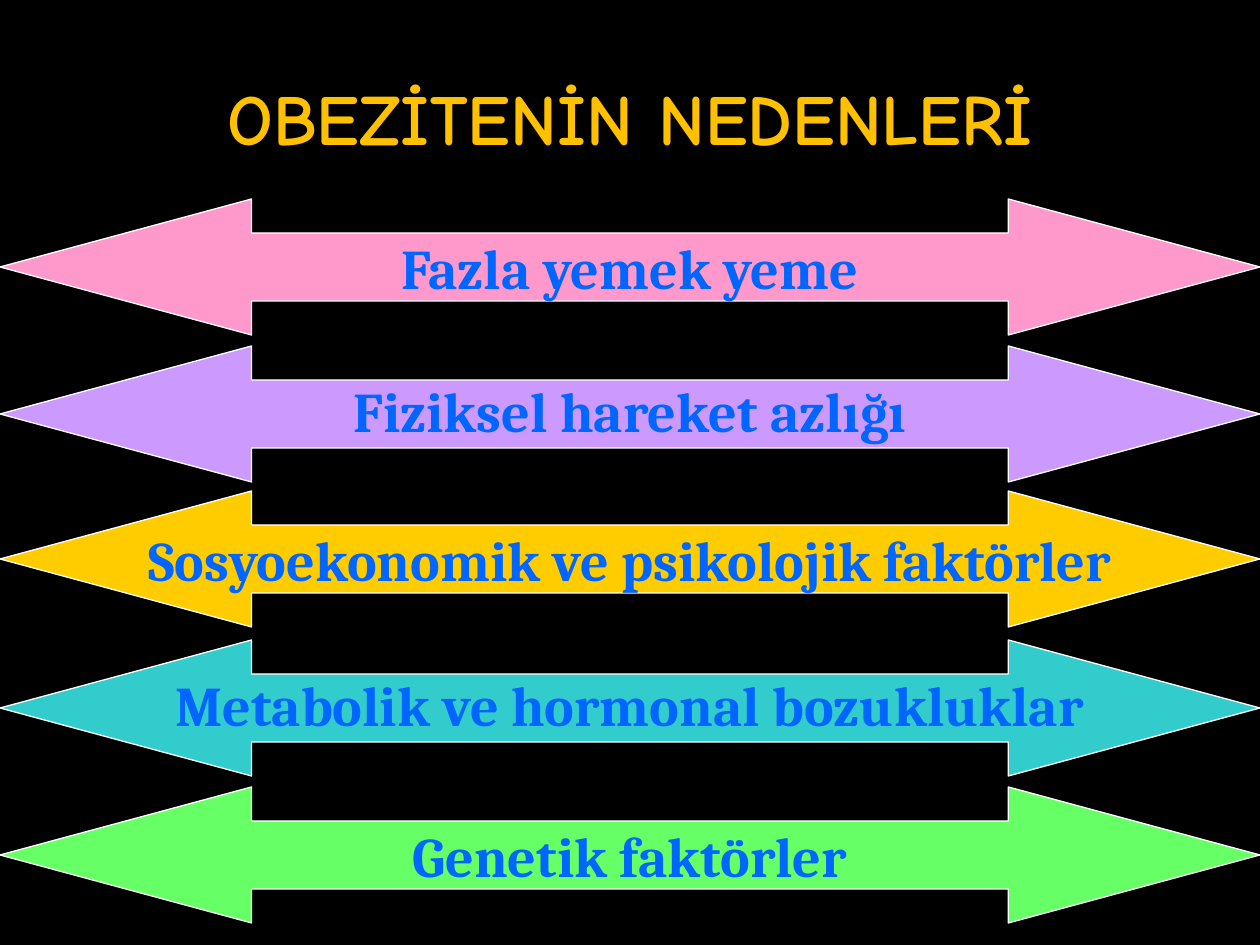
from pptx import Presentation
from pptx.dml.color import RGBColor
from pptx.enum.shapes import MSO_SHAPE
from pptx.enum.text import MSO_ANCHOR, PP_ALIGN
from pptx.util import Emu, Pt

EMU_PER_PX = 914400 / 126

BLACK = RGBColor(0x00, 0x00, 0x00)
WHITE = RGBColor(0xFF, 0xFF, 0xFF)
AMBER = RGBColor(0xFF, 0xC0, 0x00)
BLUE = RGBColor(0x00, 0x66, 0xFF)
PINK = RGBColor(0xFF, 0x99, 0xCC)
LILAC = RGBColor(0xCC, 0x99, 0xFF)
GOLD = RGBColor(0xFF, 0xCC, 0x00)
TEAL = RGBColor(0x33, 0xCC, 0xCC)
GREEN = RGBColor(0x66, 0xFF, 0x66)

TITLE_FONT = {"name": "Comic Neue", "size": Pt(41), "bold": True}
CAUSE_FONT = {"name": "Cambria", "size": Pt(32), "bold": True}

CAUSES = [
    (199, "Fazla yemek yeme", PINK, 1.0),
    (346, "Fiziksel hareket azlığı", LILAC, 0.9),
    (491, "Sosyoekonomik ve psikolojik faktörler", GOLD, 1.0),
    (640, "Metabolik ve hormonal bozukluklar", TEAL, 0.9),
    (787, "Genetik faktörler", GREEN, 1.0),
]


def px(*lengths):
    """Turn pixel lengths into a list of EMU lengths."""
    return [Emu(round(length * EMU_PER_PX)) for length in lengths]


def write_text(shape, text, font_format, color, wrap, line_spacing=1.0):
    """Put one centred, formatted paragraph into a shape."""
    frame = shape.text_frame
    frame.word_wrap = wrap
    frame.vertical_anchor = MSO_ANCHOR.MIDDLE
    paragraph = frame.paragraphs[0]
    paragraph.alignment = PP_ALIGN.CENTER
    paragraph.line_spacing = line_spacing
    run = paragraph.add_run()
    run.text = text
    for attribute, value in font_format.items():
        setattr(run.font, attribute, value)
    run.font.color.rgb = color


def add_title(slide, text):
    """Add the slide heading."""
    shape = slide.shapes.add_textbox(*px(63, 38, 1134, 157))
    write_text(shape, text, TITLE_FONT, AMBER, True)


def add_cause(slide, top, text, color, line_spacing):
    """Add a full-width double arrow naming one cause."""
    shape = slide.shapes.add_shape(
        MSO_SHAPE.LEFT_RIGHT_ARROW, *px(0, top, 1260, 136)
    )
    shape.adjustments[0] = 0.5
    shape.adjustments[1] = 1.85
    shape.shadow.inherit = False
    shape.fill.solid()
    shape.fill.fore_color.rgb = color
    shape.line.color.rgb = WHITE
    shape.line.width = Pt(0.75)
    write_text(shape, text, CAUSE_FONT, BLUE, False, line_spacing)


def main():
    """Build and save the slide."""
    presentation = Presentation()
    presentation.slide_width, presentation.slide_height = px(1260, 945)
    slide = presentation.slides.add_slide(presentation.slide_layouts[6])
    slide.background.fill.solid()
    slide.background.fill.fore_color.rgb = BLACK
    add_title(slide, "OBEZİTENİN NEDENLERİ")
    for cause in CAUSES:
        add_cause(slide, *cause)
    presentation.save("out.pptx")


if __name__ == "__main__":
    main()
